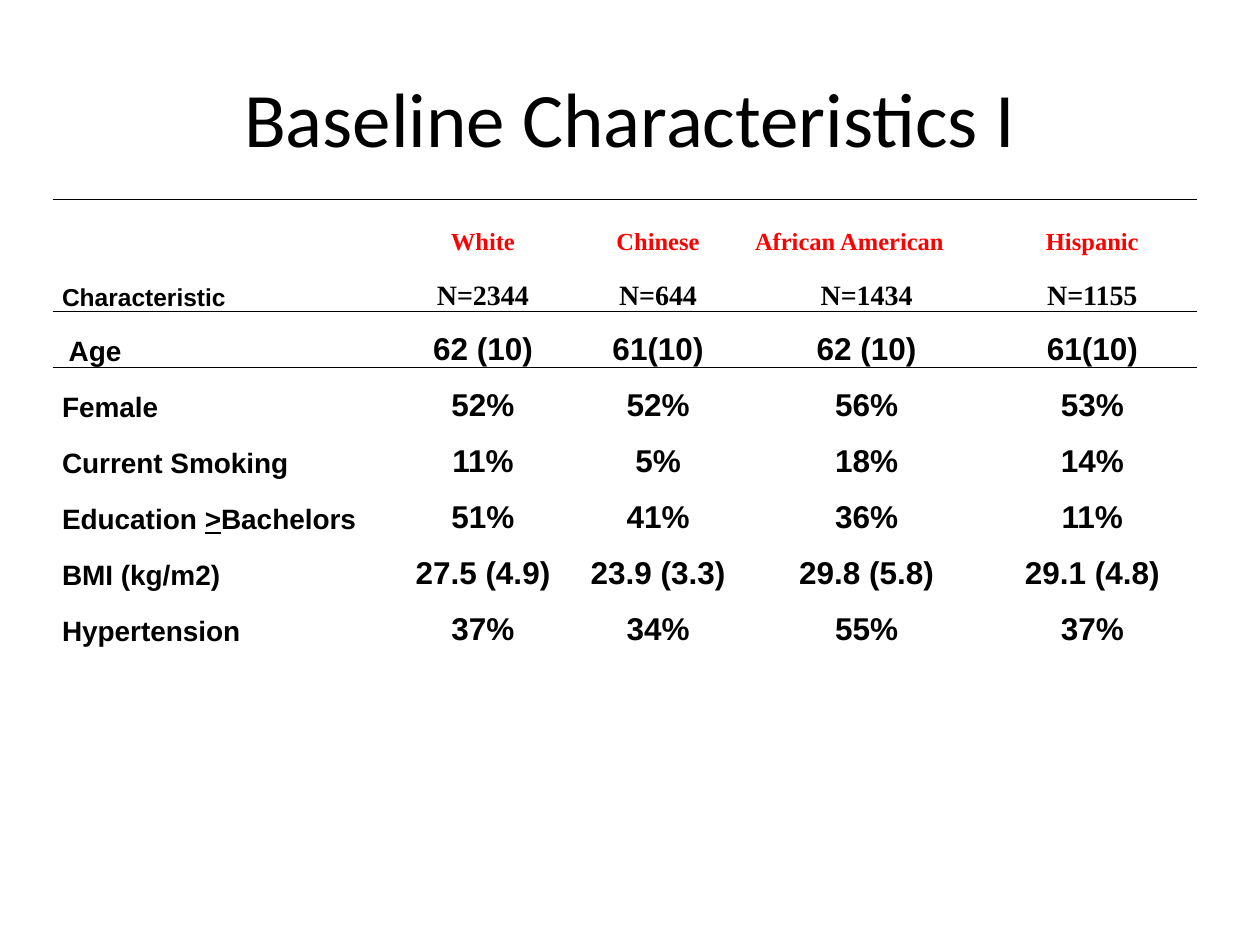
from pptx import Presentation
from pptx.dml.color import RGBColor
from pptx.enum.text import MSO_ANCHOR as Anchor, PP_ALIGN as Align
from pptx.oxml import parse_xml
from pptx.oxml.ns import nsdecls, qn
from pptx.util import Cm, Pt

BLACK, RED = "000000", "FF0000"
SERIF, SANS = "Times New Roman", "Arial"
NO_STYLE = "{2D5ABB26-0587-4C30-8999-92F81FD0307C}"
COLUMN_WIDTHS = [6.91, 3.53, 3.53, 4.88, 4.22]
ROW_HEIGHT = 1.13
UNDERLINED = ">"
ROWS = [
    ["", "White", "Chinese", "African American", "Hispanic"],
    ["Characteristic", "N=2344", "N=644", "N=1434", "N=1155"],
    [" Age", "62 (10)", "61(10)", "62 (10)", "61(10)"],
    ["Female", "52%", "52%", "56%", "53%"],
    ["Current Smoking", "11%", "5%", "18%", "14%"],
    ["Education >Bachelors", "51%", "41%", "36%", "11%"],
    ["BMI (kg/m2)", "27.5 (4.9)", "23.9 (3.3)", "29.8 (5.8)", "29.1 (4.8)"],
    ["Hypertension", "37%", "34%", "55%", "37%"],
]
# Rules above the groups, below the sample sizes and above the first measure
BORDERS = {0: "lnT", 1: "lnB", 2: "lnT"}


def rgb(color):
    return RGBColor.from_string(color)


def format_run(r, font, size, color=BLACK, bold=False):
    r.font.name = font
    r.font.size = Pt(size)
    r.font.bold = bold
    r.font.color.rgb = rgb(color)


def add_title(s, text):
    sp = s.shapes.add_textbox(Cm(1.27), Cm(0.76), Cm(22.86), Cm(3.18))
    tf = sp.text_frame
    tf.word_wrap = True
    tf.vertical_anchor = Anchor.MIDDLE
    tf.text = text
    p = tf.paragraphs[0]
    p.alignment = Align.CENTER
    format_run(p.runs[0], "Calibri", 44)


def cell_style(row, col):
    """Return the font, size and colour for a place in the table."""
    if col == 0:
        return SANS, 14 if row == 1 else 16, BLACK
    if row == 0:
        return SERIF, 14, RED
    if row == 1:
        return SERIF, 16, BLACK
    return SANS, 18, BLACK


def add_border(cell, side):
    line = parse_xml(
        f'<a:{side} {nsdecls("a")} w="12700"><a:solidFill>'
        f'<a:srgbClr val="{BLACK}"/></a:solidFill></a:{side}>')
    cell._tc.get_or_add_tcPr().insert(0, line)


def fill_cell(cell, text, row, col):
    cell.fill.background()
    cell.vertical_anchor = Anchor.BOTTOM
    cell.margin_left = cell.margin_right = Cm(0.19)
    cell.margin_top = cell.margin_bottom = 0
    p = cell.text_frame.paragraphs[0]
    p.line_spacing = 1.15
    if col and text != "African American":
        p.alignment = Align.CENTER
    before, mark, after = text.partition(UNDERLINED)
    for part in filter(None, (before, mark, after)):
        r = p.add_run()
        r.text = part
        format_run(r, *cell_style(row, col), bold=True)
        if part == UNDERLINED:
            r.font.underline = True
    if row in BORDERS:
        add_border(cell, BORDERS[row])


def add_characteristics_table(s):
    frame = s.shapes.add_table(
        len(ROWS), len(COLUMN_WIDTHS), Cm(1.06), Cm(4.02),
        Cm(sum(COLUMN_WIDTHS)), Cm(ROW_HEIGHT * len(ROWS)))
    table = frame.table
    table.first_row = table.horz_banding = False
    table._tbl.tblPr.find(qn("a:tableStyleId")).text = NO_STYLE
    for column, width in zip(table.columns, COLUMN_WIDTHS):
        column.width = Cm(width)
    for row, texts in enumerate(ROWS):
        table.rows[row].height = Cm(ROW_HEIGHT)
        for col, text in enumerate(texts):
            fill_cell(table.cell(row, col), text, row, col)


def main():
    prs = Presentation()
    prs.slide_width, prs.slide_height = Cm(25.4), Cm(19.05)
    s = prs.slides.add_slide(prs.slide_layouts[6])
    add_title(s, "Baseline Characteristics I")
    add_characteristics_table(s)
    prs.save("out.pptx")


if __name__ == "__main__":
    main()
